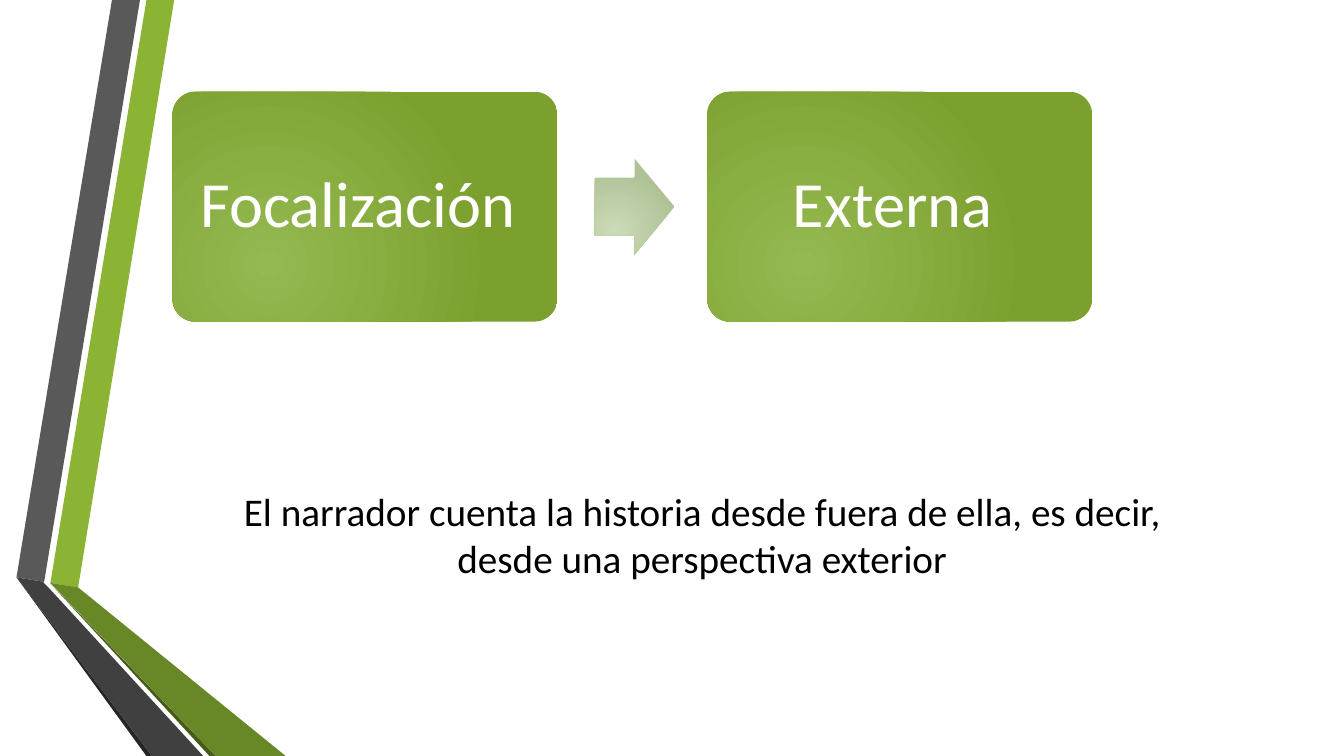
from lxml.etree import SubElement
from pptx import Presentation
from pptx.dml.color import RGBColor
from pptx.enum.shapes import MSO_SHAPE
from pptx.enum.text import MSO_ANCHOR, PP_ALIGN
from pptx.oxml.ns import qn
from pptx.util import Pt

WHITE = RGBColor(0xFF, 0xFF, 0xFF)
BLACK = RGBColor(0x00, 0x00, 0x00)
GREEN_GLOW = RGBColor(0x94, 0xB9, 0x51)
GREEN_EDGE = RGBColor(0x7C, 0xA0, 0x2E)
PALE_GLOW = RGBColor(0xCB, 0xDB, 0xB7)
PALE_EDGE = RGBColor(0xAF, 0xC2, 0x97)
LIME = RGBColor(0x8B, 0xB4, 0x34)
OLIVE = RGBColor(0x68, 0x87, 0x27)
DARK_OLIVE = RGBColor(0x46, 0x5A, 0x1A)
GRAY = RGBColor(0x59, 0x59, 0x59)
DARK_GRAY = RGBColor(0x40, 0x40, 0x40)
CHARCOAL = RGBColor(0x26, 0x26, 0x26)

SLIDE_WIDTH, SLIDE_HEIGHT = 960, 540
STEP_TOP, STEP_WIDTH, STEP_HEIGHT = 65.5, 275, 164.2
ARROW_WIDTH, ARROW_HEIGHT = 57, 68.4

RIBBONS = [
    (LIME, [(36, 416.4), (55.8, 419.6), (124.4, 0), (104.6, 0)]),
    (GRAY, [(100, 0), (80, 0), (11.8, 412.4), (31.6, 415.6)]),
    (CHARCOAL, [(11.8, 412.4), (104.6, 540), (108.6, 540)]),
    (DARK_OLIVE, [(36, 416.8), (149.6, 540), (154, 540)]),
    (OLIVE, [(36, 416.4), (154, 540), (204, 540), (55.8, 419.6)]),
    (DARK_GRAY, [(145.2, 540), (34.6, 419.6), (31, 416), (31.6, 415.6),
                 (11.8, 412.4), (108.6, 540)]),
]


def write_text(frame, text, size, color, inset=(7.2, 3.6), anchor=MSO_ANCHOR.TOP, line_spacing=1.0):
    """Fill a text frame with one centred paragraph."""
    frame.word_wrap = True
    frame.vertical_anchor = anchor
    frame.margin_left = frame.margin_right = Pt(inset[0])
    frame.margin_top = frame.margin_bottom = Pt(inset[1])
    paragraph = frame.paragraphs[0]
    paragraph.alignment = PP_ALIGN.CENTER
    paragraph.line_spacing = line_spacing
    run = paragraph.add_run()
    run.text = text
    run.font.name = "Calibri"
    run.font.size = Pt(size)
    run.font.color.rgb = color


def add_ribbon(slide, color, corners):
    """Draw one flat polygon of the folded side ribbons."""
    points = [(Pt(x), Pt(y)) for x, y in corners]
    builder = slide.shapes.build_freeform(*points[0])
    builder.add_line_segments(points[1:], close=True)
    ribbon = builder.convert_to_shape()
    ribbon.shadow.inherit = False
    ribbon.fill.solid()
    ribbon.fill.fore_color.rgb = color
    ribbon.line.fill.background()


def add_glowing_shape(slide, preset, left, top, width, height, adjustments, colors):
    """Add a preset shape lit by a circular gradient from its lower left."""
    shape = slide.shapes.add_shape(preset, Pt(left), Pt(top), Pt(width), Pt(height))
    for index, value in enumerate(adjustments):
        shape.adjustments[index] = value
    shape.shadow.inherit = False
    shape.line.fill.background()
    shape.fill.gradient()
    for stop, color in zip(shape.fill.gradient_stops, colors):
        stop.color.rgb = color
    gradient = shape.element.spPr.find(qn("a:gradFill"))
    gradient.remove(gradient.find(qn("a:lin")))
    circle = SubElement(gradient, qn("a:path"), {"path": "circle"})
    SubElement(circle, qn("a:fillToRect"),
               {"l": "50000", "t": "100000", "r": "100000", "b": "50000"})
    return shape


def add_step(slide, left, label):
    """Add a rounded green box with its label."""
    step = add_glowing_shape(slide, MSO_SHAPE.ROUNDED_RECTANGLE, left, STEP_TOP,
                             STEP_WIDTH, STEP_HEIGHT, [0.1], (GREEN_GLOW, GREEN_EDGE))
    write_text(step.text_frame, label, 46, WHITE, inset=(13.8, 13.8),
               anchor=MSO_ANCHOR.MIDDLE, line_spacing=0.9)


def main():
    """Build the slide and save it."""
    presentation = Presentation()
    presentation.slide_width, presentation.slide_height = Pt(SLIDE_WIDTH), Pt(SLIDE_HEIGHT)
    slide = presentation.slides.add_slide(presentation.slide_layouts[6])
    for color, corners in RIBBONS:
        add_ribbon(slide, color, corners)

    add_step(slide, 123.2, "Focalización ")
    arrow_top = STEP_TOP + (STEP_HEIGHT - ARROW_HEIGHT) / 2
    add_glowing_shape(slide, MSO_SHAPE.RIGHT_ARROW, 424.8, arrow_top, ARROW_WIDTH,
                      ARROW_HEIGHT, [0.6, 0.5], (PALE_GLOW, PALE_EDGE))
    add_step(slide, 505.2, "Externa ")

    definition = slide.shapes.add_textbox(Pt(139), Pt(344.2), Pt(725), Pt(75))
    write_text(definition.text_frame, "El narrador cuenta la historia desde fuera de ella, "
               "es decir, desde una perspectiva exterior", 28, BLACK)
    presentation.save("out.pptx")


if __name__ == "__main__":
    main()
